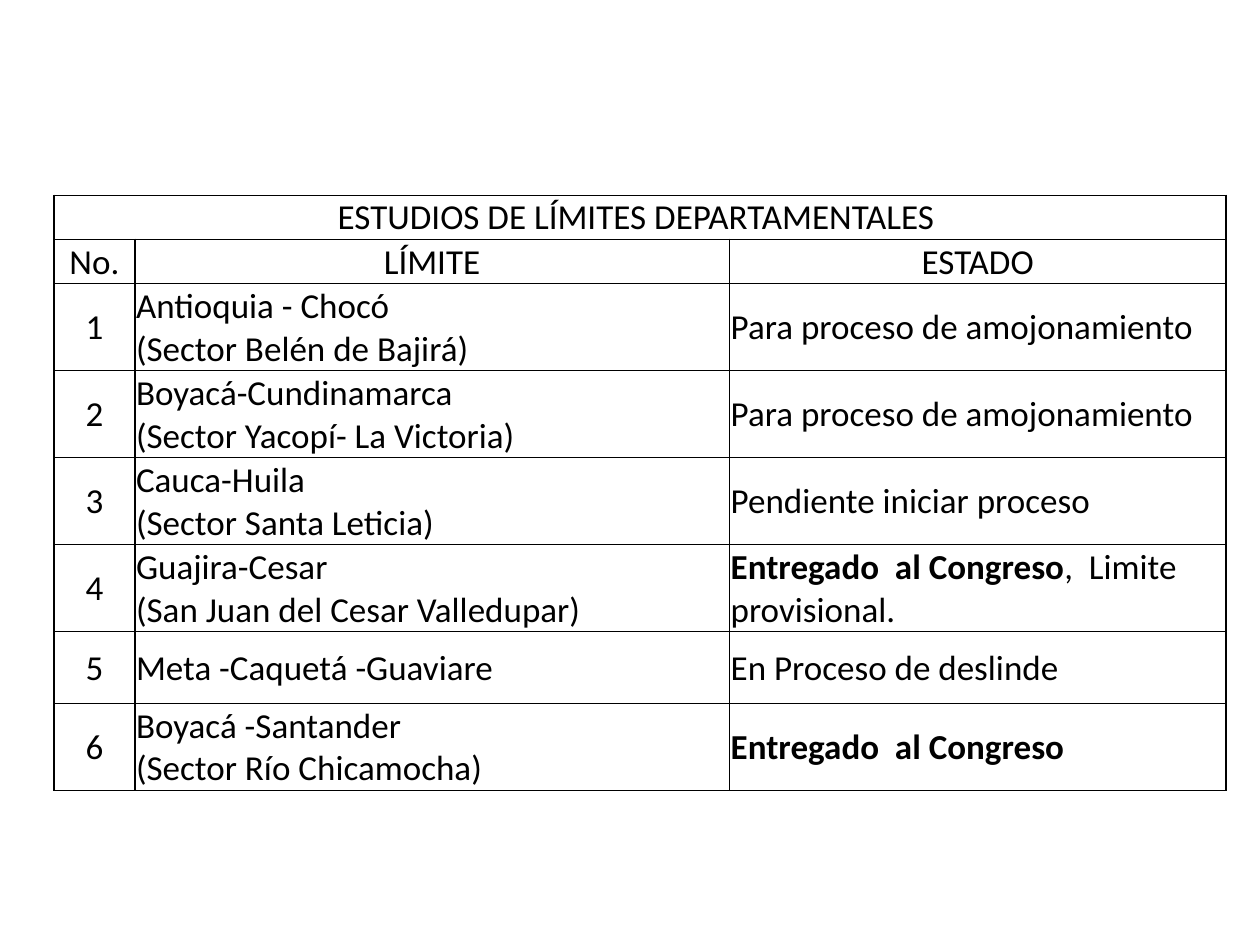
import pptx
import pptx.util
import pptx.dml.color
import pptx.enum.text
from dataclasses import dataclass
from lxml import etree

Inches, Pt = pptx.util.Inches, pptx.util.Pt
Align, Anchor = pptx.enum.text.PP_ALIGN, pptx.enum.text.MSO_ANCHOR


@dataclass(frozen=True)
class Theme:
    font: str = "Calibri"
    size: int = 20
    ink: str = "000000"
    rule: int = 1


THEME = Theme()
TITLE = "ESTUDIOS DE LÍMITES DEPARTAMENTALES "
HEADS = ["No.", "LÍMITE", "ESTADO"]
DONE = ("Entregado  al Congreso", True)
READY = ("Para proceso de amojonamiento", False)
# Each limit: its lines, then its status as (text, bold) runs
LIMITS = [
    (["Antioquia - Chocó", "(Sector Belén de Bajirá)"], [READY]),
    (["Boyacá-Cundinamarca", "(Sector Yacopí- La Victoria)"], [READY]),
    (["Cauca-Huila", "(Sector Santa Leticia)"],
     [("Pendiente iniciar proceso", False)]),
    (["Guajira-Cesar", "(San Juan del Cesar Valledupar)"],
     [DONE, (",  Limite provisional.", False)]),
    (["Meta -Caquetá -Guaviare"], [("En Proceso de deslinde", False)]),
    (["Boyacá -Santander", "(Sector Río Chicamocha)"], [DONE]),
]
LEFT, TOP = 0.43, 1.55
COLS = [0.64, 4.72, 3.94]
HEAD, SINGLE, DOUBLE = 0.34, 0.57, 0.68


def plain(text):
    return [(text, False)]


def border(cell):
    props = cell._tc.get_or_add_tcPr()
    for at, side in enumerate(("lnL", "lnR", "lnT", "lnB")):
        line = etree.Element(pptx.oxml.ns.qn("a:" + side),
                             w=str(Pt(THEME.rule)))
        fill = etree.SubElement(line, pptx.oxml.ns.qn("a:solidFill"))
        etree.SubElement(fill, pptx.oxml.ns.qn("a:srgbClr"), val=THEME.ink)
        props.insert(at, line)


def write(cell, paras, align=Align.LEFT, anchor=Anchor.MIDDLE):
    """Fill a cell with paragraphs, each a list of (text, bold) runs."""
    cell.vertical_anchor = anchor
    cell.margin_left = cell.margin_right = cell.margin_top = Inches(0.01)
    cell.margin_bottom = 0
    frame = cell.text_frame
    for i, runs in enumerate(paras):
        para = frame.add_paragraph() if i else frame.paragraphs[0]
        para.alignment = align
        for text, bold in runs:
            run = para.add_run()
            run.text = text
            font = run.font
            font.name, font.size, font.bold = THEME.font, Pt(THEME.size), bold
            font.color.rgb = pptx.dml.color.RGBColor.from_string(THEME.ink)


def main():
    deck = pptx.Presentation()
    deck.slide_width, deck.slide_height = Inches(10), Inches(7.5)
    slide = deck.slides.add_slide(deck.slide_layouts[6])

    rows = [HEAD, HEAD] + [DOUBLE if len(lines) > 1 else SINGLE
                           for lines, _ in LIMITS]
    table = slide.shapes.add_table(
        len(rows), len(COLS), Inches(LEFT), Inches(TOP),
        Inches(sum(COLS)), Inches(sum(rows))).table
    table.first_row = table.horz_banding = False
    for col, width in zip(table.columns, COLS):
        col.width = Inches(width)
    for row, height in zip(table.rows, rows):
        row.height = Inches(height)
    for cell in table.iter_cells():
        cell.fill.background()
        border(cell)

    table.cell(0, 0).merge(table.cell(0, len(COLS) - 1))
    write(table.cell(0, 0), [plain(TITLE)], Align.CENTER, Anchor.BOTTOM)
    for c, head in enumerate(HEADS):
        write(table.cell(1, c), [plain(head)], Align.CENTER)
    for num, (lines, status) in enumerate(LIMITS, 1):
        write(table.cell(num + 1, 0), [plain(str(num))], Align.CENTER)
        write(table.cell(num + 1, 1), [plain(line) for line in lines])
        write(table.cell(num + 1, 2), [status])
    deck.save("out.pptx")


if __name__ == "__main__":
    main()
